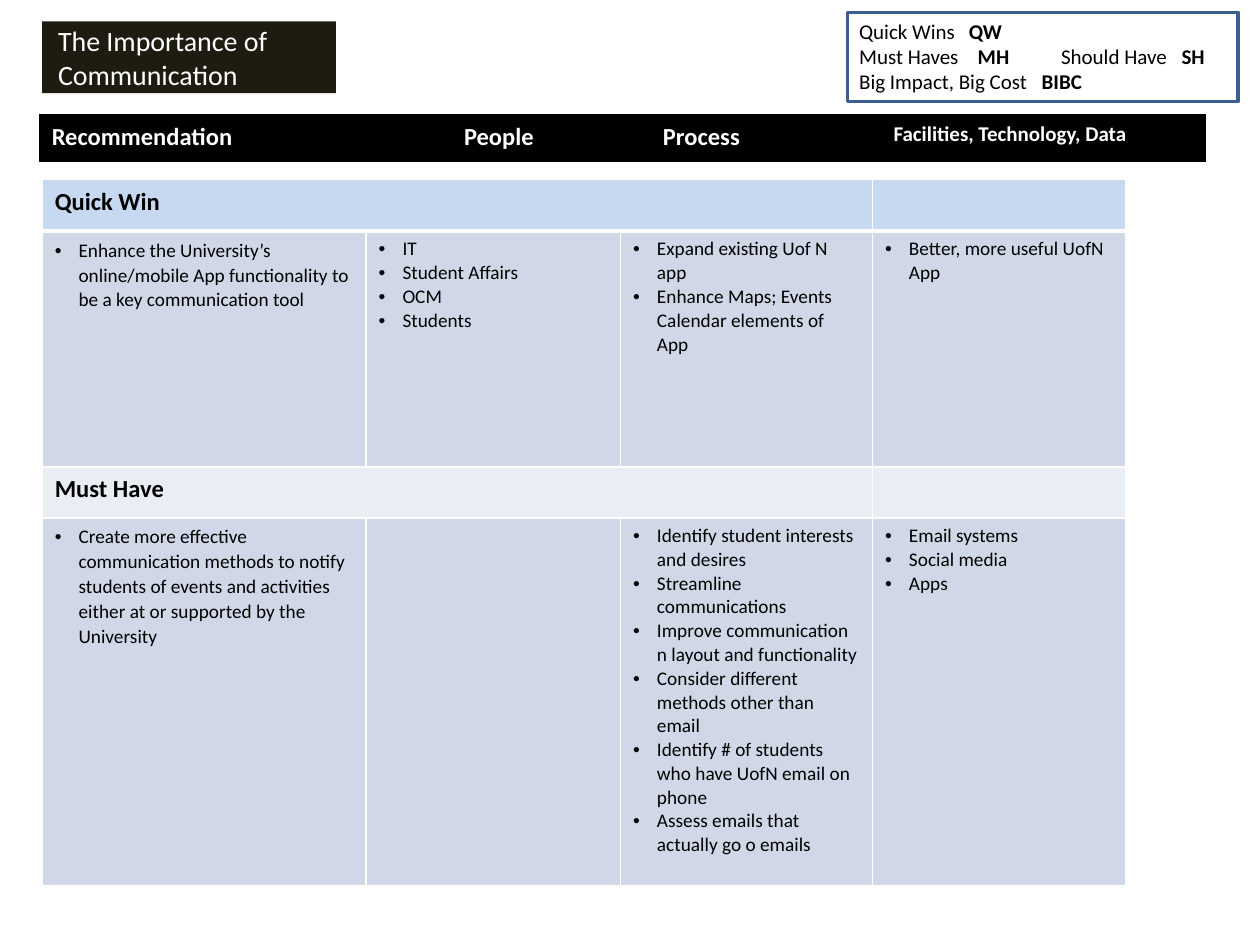
import dataclasses

import pptx
import pptx.dml.color
import pptx.enum.shapes
import pptx.enum.text
import pptx.oxml
import pptx.oxml.ns
import pptx.util
from pptx.util import Cm

NAMESPACE = pptx.oxml.ns.nsdecls("a")


@dataclasses.dataclass(frozen=True)
class Theme:
    """Colours as RRGGBB, type sizes in points, and the font."""
    font: str = "Calibri"
    black: str = "000000"
    white: str = "FFFFFF"
    badge: str = "1E1C11"
    frame: str = "3A5F8C"
    quick: str = "C6D9F1"
    must: str = "E9EDF4"
    body: str = "D0D8E8"
    title_size: int = 16
    heading_size: int = 14
    legend_size: int = 12
    body_size: int = 11


THEME = Theme()
HEADERS = ["Recommendation", "People", "Process", "Facilities, Technology, Data"]
HEADER_WIDTHS = [8.31, 4.01, 4.65, 6.55]
COLUMN_WIDTHS = [6.53, 5.13, 5.08, 5.11]
SECTIONS = [
    ("Quick Win", THEME.quick, 1.05, 4.75, [
        ["Enhance the University’s online/mobile App functionality to be a key communication tool"],
        ["IT", "Student Affairs", "OCM", "Students"],
        ["Expand existing Uof N app", "Enhance Maps; Events Calendar elements of App"],
        ["Better, more useful UofN App"],
    ]),
    ("Must Have", THEME.must, 0.95, 7.42, [
        ["Create more effective communication methods to notify students of events "
         "and activities either at or supported by the University"],
        [],
        ["Identify student interests and desires", "Streamline communications",
         "Improve communication n layout and functionality",
         "Consider different methods other than email",
         "Identify # of students who have UofN email on phone",
         "Assess emails that actually go o emails"],
        ["Email systems", "Social media", "Apps"],
    ]),
]
LEGEND = [
    (["Quick Wins", "QW"], [2.21]),
    (["Must Haves", "MH", "Should Have", "SH"], [2.39, 4.07, 6.5]),
    (["Big Impact, Big Cost", "BIBC"], [3.68]),
]


def rgb(code):
    """Turn an RRGGBB code into a colour."""
    return pptx.dml.color.RGBColor.from_string(code)


def style_span(span, size, color, bold=False):
    """Format one run of text."""
    span.font.name = THEME.font
    span.font.size = pptx.util.Pt(size)
    span.font.color.rgb = rgb(color)
    span.font.bold = bold


def style_frame(frame, size, color, bold=False):
    """Format every run of a text frame."""
    for para in frame.paragraphs:
        for span in para.runs:
            style_span(span, size, color, bold)


def fill_cell(cell, fill, border, **weights):
    """Set the borders in points, zero for none, then the fill of a cell."""
    properties = cell._tc.get_or_add_tcPr()
    for side in "LRTB":
        weight = weights.get(side, 1)
        paint = f'<a:solidFill><a:srgbClr val="{border}"/></a:solidFill>' if weight else "<a:noFill/>"
        properties.append(pptx.oxml.parse_xml(
            f'<a:ln{side} {NAMESPACE} w="{pptx.util.Pt(weight)}">{paint}</a:ln{side}>'))
    cell.fill.solid()
    cell.fill.fore_color.rgb = rgb(fill)


def add_bullets(para):
    """Give a paragraph a hanging bullet."""
    properties = para._p.get_or_add_pPr()
    properties.set("marL", str(Cm(0.48)))
    properties.set("indent", str(-Cm(0.48)))
    properties.append(pptx.oxml.parse_xml(f'<a:buFont {NAMESPACE} typeface="Arial"/>'))
    properties.append(pptx.oxml.parse_xml(f'<a:buChar {NAMESPACE} char="•"/>'))


def add_grid(page, left, top, widths, heights):
    """Add an unbanded table with the given column widths and row heights."""
    table = page.shapes.add_table(len(heights), len(widths), Cm(left), Cm(top),
                                  Cm(sum(widths)), Cm(sum(heights))).table
    table.first_row = table.horz_banding = False
    for column, width in zip(table.columns, widths):
        column.width = Cm(width)
    for row, height in zip(table.rows, heights):
        row.height = Cm(height)
    return table


def add_recommendations(page):
    """Add the table of sections, each a heading row above a row of lists."""
    heights = [height for section in SECTIONS for height in section[2:4]]
    table = add_grid(page, 0.85, 3.61, COLUMN_WIDTHS, heights)
    for index, (heading, fill, _, _, lists) in enumerate(SECTIONS):
        row = 2 * index
        rule = 1 if index else 3
        for column, items in enumerate(lists):
            fill_cell(table.cell(row, column), fill, THEME.white, B=rule)
            cell = table.cell(row + 1, column)
            fill_cell(cell, THEME.body, THEME.white, T=rule)
            if items:
                cell.text_frame.text = "\n".join(items)
                style_frame(cell.text_frame, THEME.body_size, THEME.black)
                for para in cell.text_frame.paragraphs:
                    para.line_spacing = 1.0 if column else 1.05
                    add_bullets(para)
        title = table.cell(row, 0)
        title.merge(table.cell(row, 2))
        title.text_frame.text = heading
        title.text_frame.paragraphs[0].line_spacing = 1.05
        style_frame(title.text_frame, THEME.heading_size, THEME.black, True)


def add_header(page):
    """Add the black band of column headings."""
    table = add_grid(page, 0.79, 2.33, HEADER_WIDTHS, [0.91])
    for column, heading in enumerate(HEADERS):
        cell = table.cell(0, column)
        fill_cell(cell, THEME.black, THEME.black, L=0, R=0, T=2, B=2)
        cell.text_frame.text = heading
        size = THEME.legend_size if heading == HEADERS[-1] else THEME.heading_size
        style_frame(cell.text_frame, size, THEME.white, True)


def add_title(page):
    """Turn the title placeholder into a rounded badge."""
    title = page.shapes.title
    title.left, title.top, title.width, title.height = Cm(0.85), Cm(0.43), Cm(5.92), Cm(1.45)
    title._element.spPr.append(pptx.oxml.parse_xml(
        f'<a:prstGeom {NAMESPACE} prst="roundRect"><a:avLst/></a:prstGeom>'))
    title.fill.solid()
    title.fill.fore_color.rgb = rgb(THEME.badge)
    frame = title.text_frame
    frame.text = "The Importance of Communication"
    frame.word_wrap = True
    frame.auto_size = pptx.enum.text.MSO_AUTO_SIZE.NONE
    frame.vertical_anchor = pptx.enum.text.MSO_ANCHOR.MIDDLE
    frame.margin_left = frame.margin_right = Cm(0.32)
    frame.paragraphs[0].alignment = pptx.enum.text.PP_ALIGN.LEFT
    style_frame(frame, THEME.title_size, THEME.white)


def add_legend(page):
    """Add the framed key of abbreviations, aligned with tab stops."""
    group = page.shapes.add_group_shape()
    box = group.shapes.add_textbox(Cm(17.07), Cm(0.25), Cm(7.87), Cm(1.8))
    frame = box.text_frame
    frame.word_wrap = True
    frame.text = "\n".join("" for _ in LEGEND)
    for para, (words, stops) in zip(frame.paragraphs, LEGEND):
        tabs = "".join(f'<a:tab pos="{Cm(stop)}" algn="l"/>' for stop in stops)
        para._p.get_or_add_pPr().append(
            pptx.oxml.parse_xml(f"<a:tabLst {NAMESPACE}>{tabs}</a:tabLst>"))
        for index, word in enumerate(words):
            span = para.add_run()
            span.text = "\t" + word if index else word
            style_span(span, THEME.legend_size, THEME.black, index % 2 == 1)
    border = group.shapes.add_shape(pptx.enum.shapes.MSO_SHAPE.RECTANGLE,
                                    Cm(17.09), Cm(0.25), Cm(7.87), Cm(1.8))
    border.shadow.inherit = False
    border.fill.background()
    border.line.color.rgb = rgb(THEME.frame)
    border.line.width = pptx.util.Pt(2)


def main():
    """Build the slide and save the deck."""
    deck = pptx.Presentation()
    deck.slide_width, deck.slide_height = Cm(25.4), Cm(19.05)
    page = deck.slides.add_slide(deck.slide_layouts[5])
    add_recommendations(page)
    add_header(page)
    add_title(page)
    add_legend(page)
    deck.save("out.pptx")


if __name__ == "__main__":
    main()
